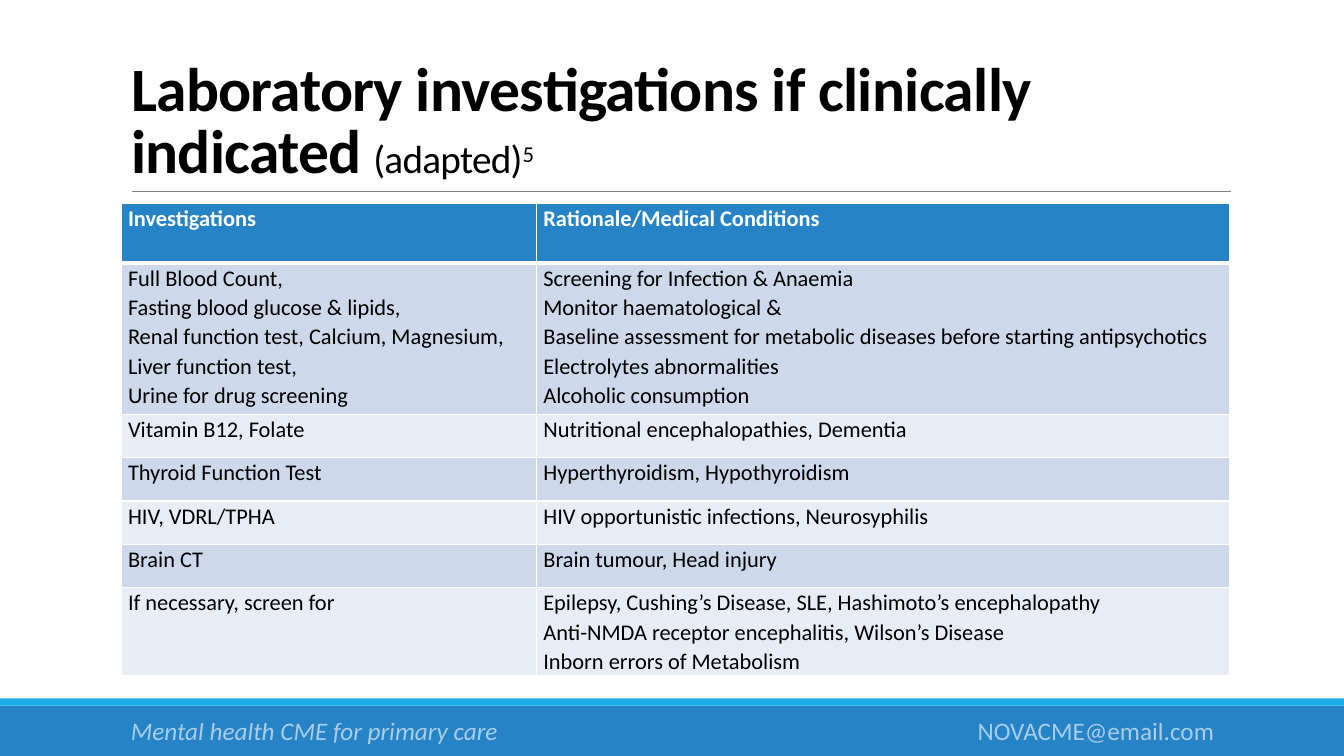
from lxml import etree
from pptx import Presentation
from pptx.dml.color import RGBColor
from pptx.enum.shapes import MSO_CONNECTOR, MSO_SHAPE
from pptx.enum.text import MSO_ANCHOR, MSO_AUTO_SIZE, PP_ALIGN
from pptx.oxml.ns import qn
from pptx.util import Emu, Pt

RECT = MSO_SHAPE.RECTANGLE
STRAIGHT = MSO_CONNECTOR.STRAIGHT
LEFT, RIGHT = PP_ALIGN.LEFT, PP_ALIGN.RIGHT
TOP, BOTTOM = MSO_ANCHOR.TOP, MSO_ANCHOR.BOTTOM
NO_AUTOFIT = MSO_AUTO_SIZE.NONE

PX = 9144  # EMU per px, 100 px to the inch
WIDTH, HEIGHT = 1333, 750
TITLE_ONLY = 5
FONT = "Calibri"
COLORS = {
    "white": "FFFFFF",
    "black": "000000",
    "blue": "2683C6",
    "cyan": "1CADE4",
    "rule": "808080",
    "band_dark": "CDD9EA",
    "band_light": "E8EDF5",
}


def px(n):
    return Emu(n * PX)


def rgb(name):
    return RGBColor.from_string(COLORS[name])


class SlideBuilder:
    def __init__(self, prs):
        self.slide = prs.slides.add_slide(prs.slide_layouts[TITLE_ONLY])
        self.shapes = self.slide.shapes

    def run(self, p, text, size, color, bold=False, italic=False):
        r = p.add_run()
        r.text = text
        f = r.font
        f.name, f.size, f.bold, f.italic = FONT, Pt(size), bold, italic
        f.color.rgb = rgb(color)
        return r

    def bar(self, x, y, w, h, color):
        sp = self.shapes.add_shape(RECT, px(x), px(y), px(w), px(h))
        sp.shadow.inherit = False
        sp.fill.solid()
        sp.fill.fore_color.rgb = rgb(color)
        sp.line.fill.background()

    def rule(self, x1, x2, y, color, width):
        line = self.shapes.add_connector(STRAIGHT, px(x1), px(y), px(x2), px(y))
        line.line.color.rgb = rgb(color)
        line.line.width = Pt(width)
        etree.SubElement(line._element.spPr, qn("a:effectLst"))

    def title(self, x, y, w, h, parts):
        sp = self.shapes.title
        sp.left, sp.top, sp.width, sp.height = px(x), px(y), px(w), px(h)
        tf = sp.text_frame
        tf.word_wrap = True
        tf.auto_size = NO_AUTOFIT
        tf.vertical_anchor = BOTTOM
        p = tf.paragraphs[0]
        p.alignment = LEFT
        p.line_spacing = 0.85
        for text, size, bold, baseline in parts:
            r = self.run(p, text, size, "black", bold)
            rPr = r.font._element
            rPr.set("spc", "-50")
            if baseline:
                rPr.set("baseline", str(baseline * 1000))

    def footer(self, x, y, w, h, text, align, italic, opacity=60):
        tf = self.shapes.add_textbox(px(x), px(y), px(w), px(h)).text_frame
        tf.word_wrap = True
        p = tf.paragraphs[0]
        p.alignment = align
        r = self.run(p, text, 18, "white", italic=italic)
        clr = r.font._element.find(".//" + qn("a:srgbClr"))
        etree.SubElement(clr, qn("a:alpha"), val=str(opacity * 1000))

    def borders(self, cell, bottom):
        tcPr = cell._tc.get_or_add_tcPr()
        widths = {"lnL": 1, "lnR": 1, "lnT": 1, "lnB": bottom}
        for i, (side, width) in enumerate(widths.items()):
            ln = etree.Element(qn("a:" + side), w=str(Pt(width)))
            fill = etree.SubElement(ln, qn("a:solidFill"))
            etree.SubElement(fill, qn("a:srgbClr"), val=COLORS["white"])
            tcPr.insert(i, ln)

    def cell(self, cell, lines, fill, color, bold, bottom):
        cell.fill.solid()
        cell.fill.fore_color.rgb = rgb(fill)
        self.borders(cell, bottom)
        cell.margin_left = cell.margin_right = px(7)
        cell.margin_top = cell.margin_bottom = 0
        cell.vertical_anchor = TOP
        tf = cell.text_frame
        for i, text in enumerate(lines):
            p = tf.add_paragraph() if i else tf.paragraphs[0]
            p.line_spacing = 1.07
            self.run(p, text, 16, color, bold)

    def table(self, x, y, cols, heights, rows):
        table = self.shapes.add_table(len(rows), len(cols), px(x), px(y),
                                      px(sum(cols)), px(sum(heights))).table
        for col, w in zip(table.columns, cols):
            col.width = px(w)
        for i, (row, h) in enumerate(zip(rows, heights)):
            table.rows[i].height = px(h)
            if i == 0:
                style = ("blue", "white", True, 3)
            else:
                band = "band_dark" if i % 2 else "band_light"
                style = (band, "black", False, 1)
            for j, lines in enumerate(row):
                self.cell(table.cell(i, j), lines, *style)


INVESTIGATIONS = [
    (["Investigations"], ["Rationale/Medical Conditions"]),
    (["Full Blood Count,",
      "Fasting blood glucose & lipids,",
      "Renal function test, Calcium, Magnesium,",
      "Liver function test,",
      "Urine for drug screening"],
     ["Screening for Infection & Anaemia",
      "Monitor haematological &",
      "Baseline assessment for metabolic diseases before starting antipsychotics",
      "Electrolytes abnormalities",
      "Alcoholic consumption"]),
    (["Vitamin B12, Folate"], ["Nutritional encephalopathies, Dementia"]),
    (["Thyroid Function Test"], ["Hyperthyroidism, Hypothyroidism"]),
    (["HIV, VDRL/TPHA"], ["HIV opportunistic infections, Neurosyphilis"]),
    (["Brain CT"], ["Brain tumour, Head injury"]),
    (["If necessary, screen for"],
     ["Epilepsy, Cushing’s Disease, SLE, Hashimoto’s encephalopathy",
      "Anti-NMDA receptor encephalitis, Wilson’s Disease",
      "Inborn errors of Metabolism"]),
]


def main():
    prs = Presentation()
    prs.slide_width, prs.slide_height = px(WIDTH), px(HEIGHT)
    s = SlideBuilder(prs)

    # Footer band
    s.bar(0, 700, WIDTH, 50, "blue")
    s.bar(0, 693, WIDTH, 7, "cyan")
    s.footer(120, 705, 550, 40, "Mental health CME for primary care", LEFT, True)
    s.footer(670, 705, 544, 40, "NOVACME@email.com", RIGHT, False)

    # Title and rule
    s.title(120, 31, 1100, 159, [
        ("Laboratory investigations if clinically indicated", 44, True, 0),
        (" ", 36, False, 0),
        ("(adapted)", 28, False, 0),
        ("5", 28, False, 30),
    ])
    s.rule(131, 1221, 190, "rule", 0.5)

    # Investigations table
    s.table(120, 202, [412, 688], [59, 150] + [43] * 4 + [87], INVESTIGATIONS)

    prs.save("out.pptx")


if __name__ == "__main__":
    main()
